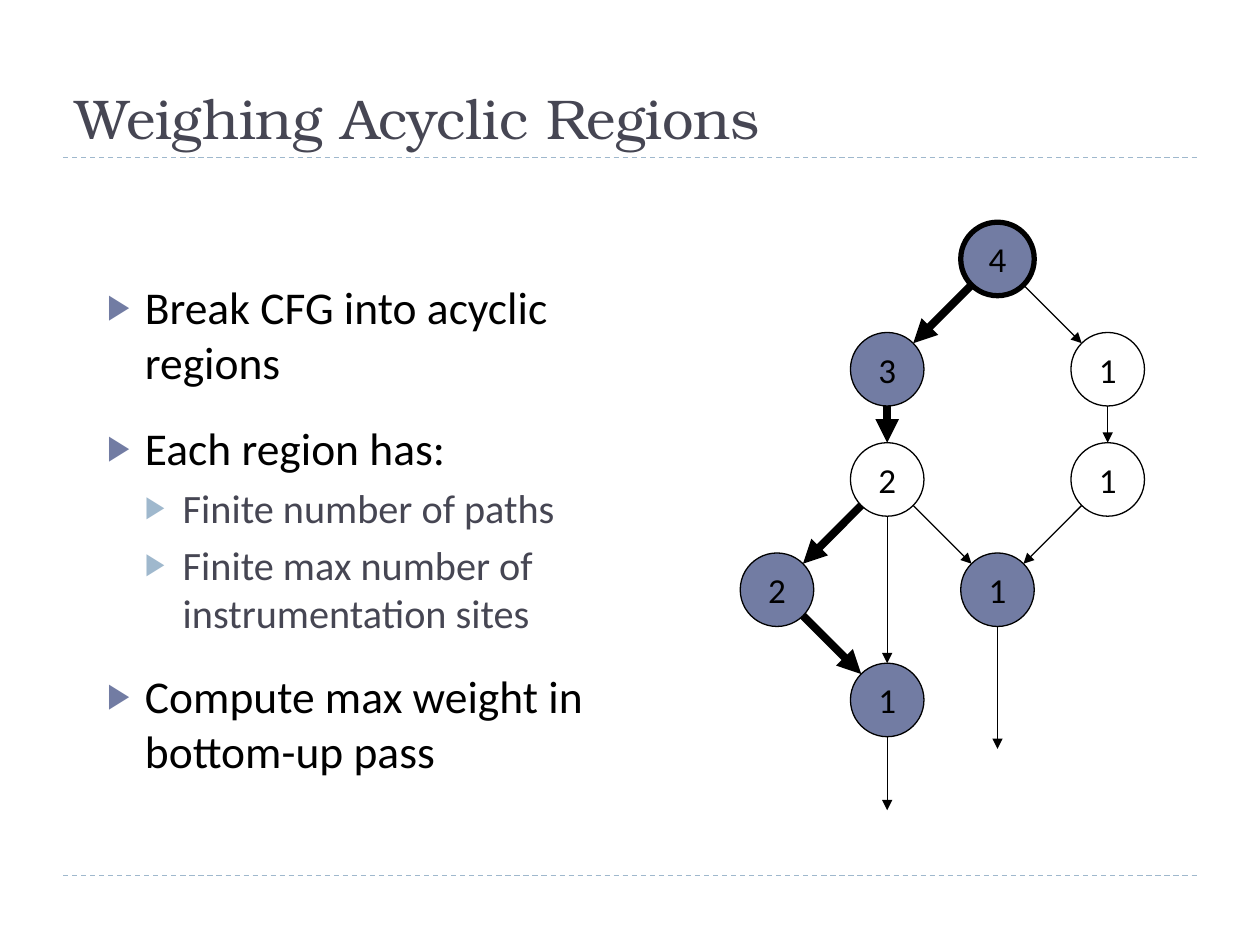
from math import hypot
from typing import NamedTuple

from pptx import Presentation
from pptx.dml.color import RGBColor
from pptx.enum.dml import MSO_LINE_DASH_STYLE as Dash
from pptx.enum.shapes import MSO_CONNECTOR as Link, MSO_SHAPE as Form
from pptx.enum.text import MSO_ANCHOR as Anchor, MSO_AUTO_SIZE as Fit, PP_ALIGN as Align
from pptx.oxml import parse_xml
from pptx.oxml.ns import nsdecls
from pptx.util import Pt

HUE = {"ink": "000000", "slate": "464653", "blue": "727CA3",
       "pale": "9FB8CD", "white": "FFFFFF"}
SANS, SERIF = "Calibri", "TeX Gyre Bonum"

# Graph grid: node size, step and the centre of the first cell
SIZE, STEP = 42, 63
LEFT, TOP = 444, 148


class Node(NamedTuple):
    col: int
    row: int
    text: str
    fill: str
    line: float = 0.75


class Edge(NamedTuple):
    start: str
    end: str
    heavy: bool = False


class Item(NamedTuple):
    text: str
    level: int = 0


class Style(NamedTuple):
    size: float
    ink: str
    mark: str
    gap: float


NODES = {
    "right": Node(3, 1, "1", "white"),
    "fork": Node(1, 2, "2", "white"),
    "lower": Node(3, 2, "1", "white"),
    "join": Node(2, 3, "1", "blue"),
    "last": Node(1, 4, "1", "blue"),
    "side": Node(0, 3, "2", "blue"),
    "left": Node(1, 1, "3", "blue"),
    "root": Node(2, 0, "4", "blue", 3),
}
EDGES = [
    Edge("root", "right"), Edge("fork", "last"), Edge("fork", "join"),
    Edge("right", "lower"), Edge("lower", "join"),
    Edge("side", "last", True), Edge("fork", "side", True),
    Edge("left", "fork", True), Edge("root", "left", True),
]
EXITS = {"last": 42, "join": 70}
ITEMS = [
    Item("Break CFG into acyclic regions"),
    Item("Each region has:"),
    Item("Finite number of paths", 1),
    Item("Finite max number of instrumentation sites", 1),
    Item("Compute max weight in bottom-up pass"),
]
STYLES = [Style(26, "ink", "blue", 18), Style(23, "slate", "pale", 5)]


def color(name: str) -> RGBColor:
    return RGBColor.from_string(HUE[name])


def add_run(para, text: str, size: float, ink: str, face: str = SANS) -> None:
    run = para.add_run()
    run.text = text
    run.font.size = Pt(size)
    run.font.name = face
    run.font.color.rgb = color(ink)


def place(shape, x: float, y: float, w: float, h: float) -> None:
    shape.left, shape.top, shape.width, shape.height = Pt(x), Pt(y), Pt(w), Pt(h)


def add_line(slide, x1: float, y1: float, x2: float, y2: float,
             ink: str = "ink", width: float = 0.75, arrow: bool = True) -> None:
    line = slide.shapes.add_connector(Link.STRAIGHT, Pt(x1), Pt(y1), Pt(x2), Pt(y2))
    line.line.color.rgb = color(ink)
    line.line.width = Pt(width)
    if arrow:
        head = parse_xml(f'<a:tailEnd {nsdecls("a")} type="triangle"/>')
        line.line._get_or_add_ln().append(head)
    else:
        line.line.dash_style = Dash.DASH
    line._element.spPr.append(parse_xml(f'<a:effectLst {nsdecls("a")}/>'))


def center(node: Node) -> tuple[float, float]:
    return LEFT + node.col * STEP, TOP + node.row * STEP


def add_node(slide, node: Node) -> None:
    x, y = center(node)
    shape = slide.shapes.add_shape(Form.FLOWCHART_CONNECTOR, Pt(x - SIZE / 2),
                                   Pt(y - SIZE / 2), Pt(SIZE), Pt(SIZE))
    shape.shadow.inherit = False
    shape.fill.solid()
    shape.fill.fore_color.rgb = color(node.fill)
    shape.line.color.rgb = color("ink")
    shape.line.width = Pt(node.line)
    frame = shape.text_frame
    frame.word_wrap = False
    frame.vertical_anchor = Anchor.MIDDLE
    para = frame.paragraphs[0]
    para.alignment = Align.CENTER
    add_run(para, node.text, 20, "ink")


def add_edge(slide, edge: Edge) -> None:
    """Join two nodes from rim to rim along the line of their centres."""
    x1, y1 = center(NODES[edge.start])
    x2, y2 = center(NODES[edge.end])
    part = SIZE / 2 / hypot(x2 - x1, y2 - y1)
    dx, dy = (x2 - x1) * part, (y2 - y1) * part
    add_line(slide, x1 + dx, y1 + dy, x2 - dx, y2 - dy,
             width=4.5 if edge.heavy else 0.75)


def add_item(para, item: Item, first: bool) -> None:
    style = STYLES[item.level]
    para.level = item.level
    props = para._p.get_or_add_pPr()
    props.set("marL", str(Pt(21.6 * (item.level + 1))))
    props.set("indent", str(Pt(-21.6)))
    for tag in (f'<a:buClr {nsdecls("a")}><a:srgbClr val="{HUE[style.mark]}"/></a:buClr>',
                f'<a:buSzPct {nsdecls("a")} val="76000"/>',
                f'<a:buChar {nsdecls("a")} char="▶"/>'):
        props.append(parse_xml(tag))
    para.space_before = Pt(0 if first else style.gap)
    add_run(para, item.text, style.size, style.ink)


def main() -> None:
    deck = Presentation()
    deck.slide_width, deck.slide_height = Pt(720), Pt(540)
    slide = deck.slides.add_slide(deck.slide_layouts[1])
    title, body = slide.placeholders

    # Dashed rules
    for y in (500.4, 90):
        add_line(slide, 36, y, 684, y, "pale", arrow=False)

    # Title
    place(title, 36, 18, 648, 72)
    frame = title.text_frame
    frame.auto_size = Fit.NONE
    frame.vertical_anchor = Anchor.BOTTOM
    frame.paragraphs[0].alignment = Align.LEFT
    add_run(frame.paragraphs[0], "Weighing Acyclic Regions", 32, "slate", SERIF)

    # Bullet list
    place(body, 54, 156, 300, 324)
    frame = body.text_frame
    frame.auto_size = Fit.NONE
    frame.vertical_anchor = Anchor.TOP
    for i, item in enumerate(ITEMS):
        add_item(frame.add_paragraph() if i else frame.paragraphs[0], item, i == 0)

    # Flow graph
    for node in NODES.values():
        add_node(slide, node)
    for name, length in EXITS.items():
        x, y = center(NODES[name])
        add_line(slide, x, y + SIZE / 2, x, y + SIZE / 2 + length)
    for edge in EDGES:
        add_edge(slide, edge)

    deck.save("out.pptx")


if __name__ == "__main__":
    main()
